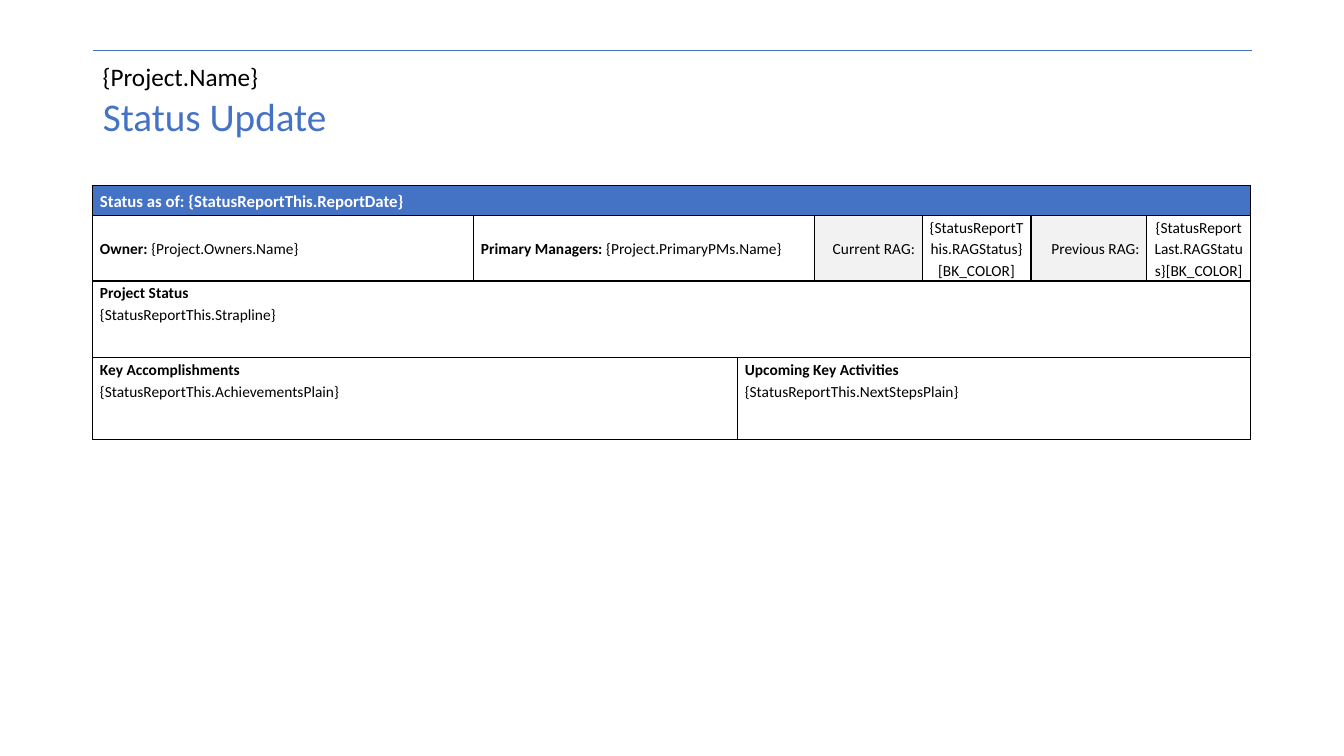
"""Build a project status update slide with a report table."""
from lxml import etree
from pptx import Presentation
from pptx.dml.color import RGBColor
from pptx.enum.shapes import MSO_CONNECTOR
from pptx.enum.text import MSO_ANCHOR, PP_ALIGN
from pptx.oxml.ns import qn
from pptx.util import Cm, Pt

LEFT, CENTER, RIGHT = PP_ALIGN.LEFT, PP_ALIGN.CENTER, PP_ALIGN.RIGHT
TOP, MIDDLE = MSO_ANCHOR.TOP, MSO_ANCHOR.MIDDLE
STRAIGHT = MSO_CONNECTOR.STRAIGHT

COLORS = {"blue": "4472C4", "black": "000000", "white": "FFFFFF", "grey": "F2F2F2"}
FONT = "Calibri"
MARGIN, CONTENT_WIDTH = 2.34, 29.21
TITLE = "Status Update"
PROJECT = "{Project.Name}"

COLUMN_WIDTHS = [9.6, 6.65, 1.93, 2.72, 2.74, 2.92, 2.62]
ROW_HEIGHTS = [0.76, 1.65, 1.93, 2.07]
LABEL = {"align": RIGHT, "fill": "grey"}
SECTION = {"anchor": TOP}
ROWS = [
    [(7, "Status as of: {StatusReportThis.ReportDate}", "",
      {"size": 12, "color": "white", "fill": "blue"})],
    [(1, "Owner: ", "{Project.Owners.Name}", {}),
     (2, "Primary Managers:", " {Project.PrimaryPMs.Name}", {}),
     (1, "", "Current RAG:", LABEL),
     (1, "", "{StatusReportThis.RAGStatus}[BK_COLOR]", {"align": CENTER}),
     (1, "", "Previous RAG:", LABEL),
     (1, "", "{StatusReportLast.RAGStatus}[BK_COLOR]", {"align": CENTER})],
    [(7, "Project Status\n", "{StatusReportThis.Strapline}", SECTION)],
    [(2, "Key Accomplishments\n", "{StatusReportThis.AchievementsPlain}", SECTION),
     (5, "Upcoming Key Activities\n", "{StatusReportThis.NextStepsPlain}", SECTION)],
]


def rgb(name):
    return RGBColor.from_string(COLORS[name])


def write(frame, text, *, heading="", size=11, color="black", align=LEFT, spacing=1.15):
    para = frame.paragraphs[0]
    para.alignment = align
    para.line_spacing = spacing
    for part, bold in ((heading, True), (text, False)):
        if not part:
            continue
        span = para.add_run()
        span.text = part.rstrip("\n")
        span.font.name, span.font.size, span.font.bold = FONT, Pt(size), bold
        span.font.color.rgb = rgb(color)
        if part.endswith("\n"):
            para.add_line_break()


def add_borders(cell):
    properties = cell._tc.get_or_add_tcPr()
    for side in ("a:lnL", "a:lnR", "a:lnT", "a:lnB"):
        line = etree.SubElement(properties, qn(side), w=str(Pt(1)))
        fill = etree.SubElement(line, qn("a:solidFill"))
        etree.SubElement(fill, qn("a:srgbClr"), val=COLORS["black"])


def format_cell(cell, heading, text, *, anchor=MIDDLE, fill="white", **text_format):
    cell.vertical_anchor = anchor
    cell.margin_left = cell.margin_right = Cm(0.18)
    cell.margin_top = cell.margin_bottom = 0
    cell.fill.solid()
    cell.fill.fore_color.rgb = rgb(fill)
    write(cell.text_frame, text, heading=heading, **text_format)


def add_header(page):
    rule = page.shapes.add_connector(
        STRAIGHT, Cm(MARGIN), Cm(1.27), Cm(MARGIN + CONTENT_WIDTH), Cm(1.27))
    rule.line.color.rgb = rgb("blue")
    rule.line.width = Pt(1)
    etree.SubElement(rule._element.spPr, qn("a:effectLst"))

    title = page.shapes.title
    title.left, title.top = Cm(MARGIN), Cm(2.46)
    title.width, title.height = Cm(CONTENT_WIDTH), Cm(1.07)
    frame = title.text_frame
    frame.margin_left = Cm(0.25)
    frame.margin_right = frame.margin_top = frame.margin_bottom = 0
    frame.vertical_anchor = MIDDLE
    write(frame, TITLE, size=28, color="blue", spacing=0.9)

    box = page.shapes.add_textbox(Cm(MARGIN), Cm(1.5), Cm(27.2), Cm(0.76))
    box.text_frame.word_wrap = True
    write(box.text_frame, PROJECT, size=18, spacing=0.9)


def add_status_table(page):
    table = page.shapes.add_table(
        len(ROWS), len(COLUMN_WIDTHS), Cm(MARGIN), Cm(4.67),
        Cm(sum(COLUMN_WIDTHS)), Cm(sum(ROW_HEIGHTS))).table
    table.first_row = table.horz_banding = False
    for column, width in zip(table.columns, COLUMN_WIDTHS):
        column.width = Cm(width)
    for row, height in zip(table.rows, ROW_HEIGHTS):
        row.height = Cm(height)
    for cell in table.iter_cells():
        add_borders(cell)
    for row_index, entries in enumerate(ROWS):
        start = 0
        for columns, heading, text, cell_format in entries:
            cell = table.cell(row_index, start)
            if columns > 1:
                cell.merge(table.cell(row_index, start + columns - 1))
            format_cell(cell, heading, text, **cell_format)
            start += columns


def main():
    deck = Presentation()
    deck.slide_width, deck.slide_height = Cm(33.87), Cm(19.05)
    page = deck.slides.add_slide(deck.slide_layouts[5])
    add_header(page)
    add_status_table(page)
    deck.save("out.pptx")


if __name__ == "__main__":
    main()
